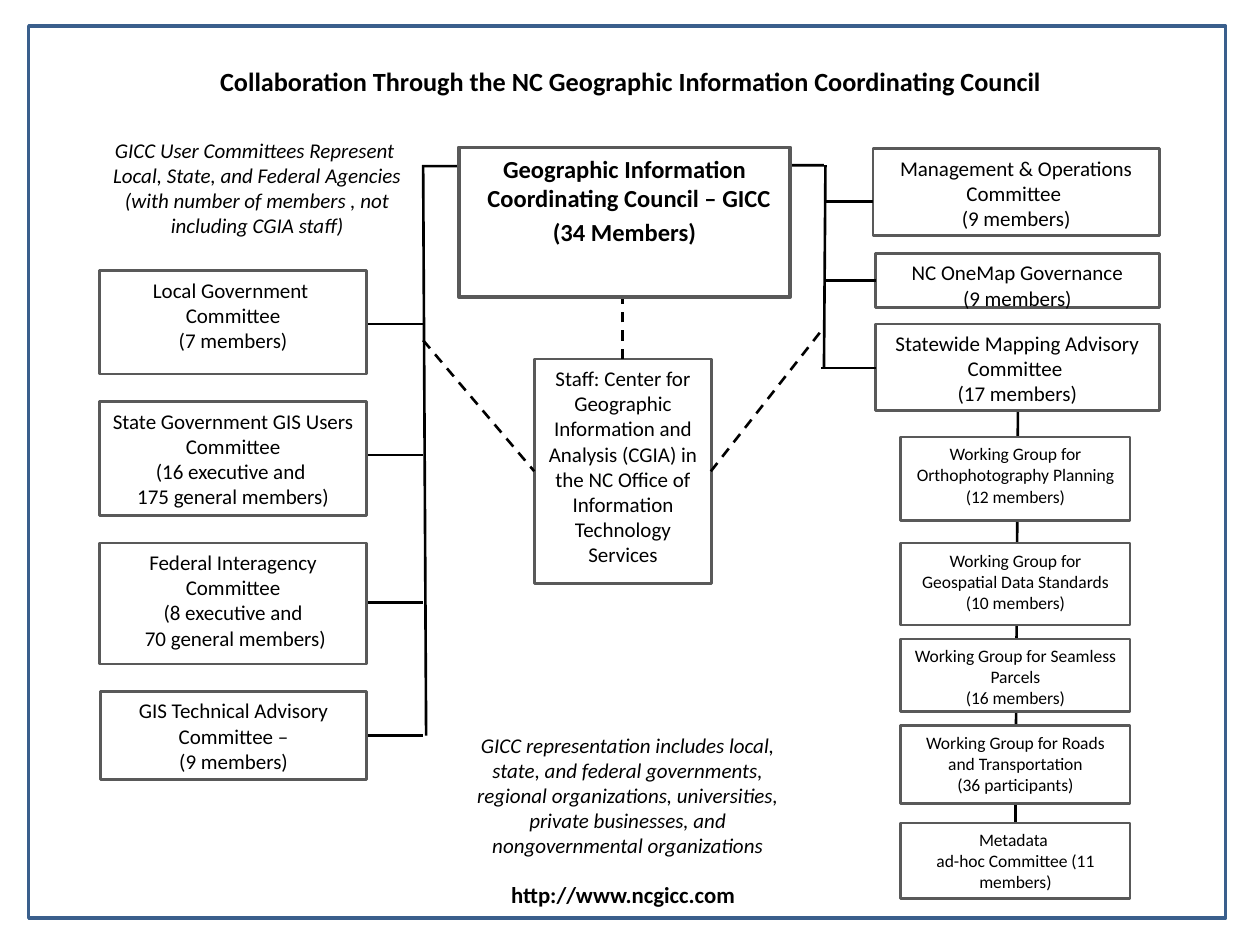
from dataclasses import dataclass

from lxml import etree
from pptx import Presentation
from pptx.dml.color import RGBColor
from pptx.enum import dml, shapes, text
from pptx.oxml import ns
from pptx.util import Cm, Pt


@dataclass(frozen=True)
class Theme:
    font: str = "Calibri"
    ink: RGBColor = RGBColor(0x00, 0x00, 0x00)
    paper: RGBColor = RGBColor(0xFF, 0xFF, 0xFF)
    edge: RGBColor = RGBColor(0x59, 0x59, 0x59)
    frame: RGBColor = RGBColor(0x3A, 0x5F, 0x8C)
    title: int = 15
    head: int = 14
    link: int = 13
    body: int = 12
    small: int = 10
    thin: float = 1.5
    thick: float = 2


T = Theme()


@dataclass(frozen=True)
class Box:
    """A bordered or plain text block; lengths in centimetres."""
    x: float
    y: float
    w: float
    h: float
    lines: tuple[str, ...]
    size: int = T.body
    bold: bool = False
    slant: bool = False
    line: float = T.thin
    fill: bool = True
    hang: float = 0


@dataclass(frozen=True)
class Link:
    x1: float
    y1: float
    x2: float
    y2: float
    dash: bool = False


TITLE = "Collaboration Through the NC Geographic Information Coordinating Council"

COUNCIL = Box(9.25, 2.97, 6.68, 3.02,
              ("Geographic Information Coordinating Council – GICC ", "(34 Members)"),
              T.head, bold=True, line=T.thick, hang=0.3)
STAFF = Box(10.77, 7.24, 3.58, 4.52,
            ("Staff: Center for Geographic Information and Analysis (CGIA) in "
             "the NC Office of Information Technology Services",))
USERS = [
    Box(2.01, 5.46, 5.38, 2.08, ("Local Government ", "Committee", "(7 members)")),
    Box(2.01, 8.1, 5.38, 2.29,
        ("State Government GIS Users Committee", "(16 executive and ", "175 general members)")),
    Box(2.01, 10.95, 5.38, 2.44,
        ("Federal Interagency Committee", "(8 executive and", " 70 general members)")),
    Box(2.03, 13.94, 5.36, 1.78, ("GIS Technical Advisory Committee –", "(9 members)")),
]
BOARDS = [
    Box(17.6, 3, 5.77, 1.75, ("Management & Operations Committee ", "(9 members)")),
    Box(17.65, 5.11, 5.72, 1.09, ("NC OneMap Governance", "(9 members)")),
    Box(17.65, 6.53, 5.72, 1.75, ("Statewide Mapping Advisory Committee ", "(17 members)")),
]
GROUPS = [
    Box(18.16, y, 4.62, h, lines, T.small, fill=fill)
    for y, h, fill, lines in (
        (8.81, 1.68, True, ("Working Group for Orthophotography Planning", "(12 members)")),
        (10.95, 1.65, True, ("Working Group for Geospatial Data Standards", "(10 members)")),
        (12.88, 1.47, True, ("Working Group for Seamless Parcels", "(16 members)")),
        (14.63, 1.57, True, ("Working Group for Roads and Transportation", "(36 participants)")),
        (16.59, 1.52, False, ("Metadata ", "ad-hoc Committee (11 members)")),
    )
]
NOTES = [
    Box(1.96, 2.64, 6.45, 2.79,
        ("GICC User Committees Represent ", "Local, State, and Federal Agencies",
         "(with number of members , not including CGIA staff)"), slant=True),
    Box(9.25, 14.63, 6.81, 3,
        ("GICC representation includes local, state, and federal governments, "
         "regional organizations, universities, private businesses, and "
         "nongovernmental organizations",), slant=True),
    Box(8.71, 17.63, 7.7, 0.76, ("http://www.ncgicc.com",), T.link, bold=True),
]

# Trunks run behind the boxes; branches and staff ties join them.
BACK = [Link(8.51, 3.35, 16.61, 3.33), Link(20.52, 8.28, 20.47, 16.59)]
FRONT = [
    Link(8.53, 3.33, 8.59, 14.83),
    Link(16.64, 3.33, 16.61, 7.42),
    *(Link(7.42, y, 8.53, y) for y in (6.53, 9.17, 12.14, 14.83)),
    *(Link(x, y, end, y) for x, y, end in
      ((16.64, 4.06, 17.6), (16.61, 5.66, 17.65), (16.56, 7.42, 17.65))),
    Link(14.33, 9.5, 16.61, 6.6, dash=True),
    Link(8.53, 6.86, 10.77, 9.5, dash=True),
    Link(12.55, 7.24, 12.55, 5.99, dash=True),
]


def write(shape, box: Box) -> None:
    body = shape.text_frame
    body.word_wrap = True
    body.auto_size = text.MSO_AUTO_SIZE.NONE
    body.vertical_anchor = text.MSO_ANCHOR.TOP
    body.margin_left = body.margin_right = Cm(0.25)
    body.margin_top = body.margin_bottom = Cm(0.13)
    body.text = "\n".join(box.lines)
    for para in body.paragraphs:
        para.alignment = text.PP_ALIGN.CENTER
        font = para.font
        font.name, font.size = T.font, Pt(box.size)
        font.bold, font.italic = box.bold, box.slant
        font.color.rgb = T.ink
        if box.hang:
            para.space_before = Pt(box.size * 0.2)
            props = para._p.get_or_add_pPr()
            props.set("marL", str(Cm(box.hang)))
            props.set("indent", str(-Cm(box.hang)))


def add_rect(slide, x: float, y: float, w: float, h: float,
             color: RGBColor, line: float, fill: bool):
    rect = slide.shapes.add_shape(shapes.MSO_SHAPE.RECTANGLE, Cm(x), Cm(y), Cm(w), Cm(h))
    rect.shadow.inherit = False
    if fill:
        rect.fill.solid()
        rect.fill.fore_color.rgb = T.paper
    else:
        rect.fill.background()
    rect.line.color.rgb = color
    rect.line.width = Pt(line)
    return rect


def add_box(slide, box: Box) -> None:
    write(add_rect(slide, box.x, box.y, box.w, box.h, T.edge, box.line, box.fill), box)


def add_note(slide, box: Box) -> None:
    write(slide.shapes.add_textbox(Cm(box.x), Cm(box.y), Cm(box.w), Cm(box.h)), box)


def add_link(slide, link: Link) -> None:
    line = slide.shapes.add_connector(shapes.MSO_CONNECTOR.STRAIGHT, Cm(link.x1),
                                      Cm(link.y1), Cm(link.x2), Cm(link.y2))
    line.line.color.rgb = T.ink
    line.line.width = Pt(T.thin)
    if link.dash:
        line.line.dash_style = dml.MSO_LINE.DASH
    etree.SubElement(line._element.spPr, ns.qn("a:effectLst"))


def set_title(slide) -> None:
    title = slide.shapes.title
    title.left, title.top, title.width, title.height = Cm(2.01), Cm(1.17), Cm(21.41), Cm(0.91)
    write(title, Box(2.01, 1.17, 21.41, 0.91, (TITLE,), T.title, bold=True))
    body = title.text_frame
    body.vertical_anchor = text.MSO_ANCHOR.MIDDLE
    body.margin_top = body.margin_bottom = 0


def main() -> None:
    deck = Presentation()
    deck.slide_width, deck.slide_height = Cm(25.4), Cm(19.05)
    slide = deck.slides.add_slide(deck.slide_layouts.get_by_name("Title Only"))
    set_title(slide)
    for link in BACK:
        add_link(slide, link)
    add_rect(slide, 0.58, 0.53, 24.13, 17.98, T.frame, T.thick, False)
    for note in NOTES:
        add_note(slide, note)
    for box in (*USERS, *BOARDS, *GROUPS, STAFF):
        add_box(slide, box)
    for link in FRONT:
        add_link(slide, link)
    add_box(slide, COUNCIL)
    deck.save("out.pptx")


if __name__ == "__main__":
    main()
